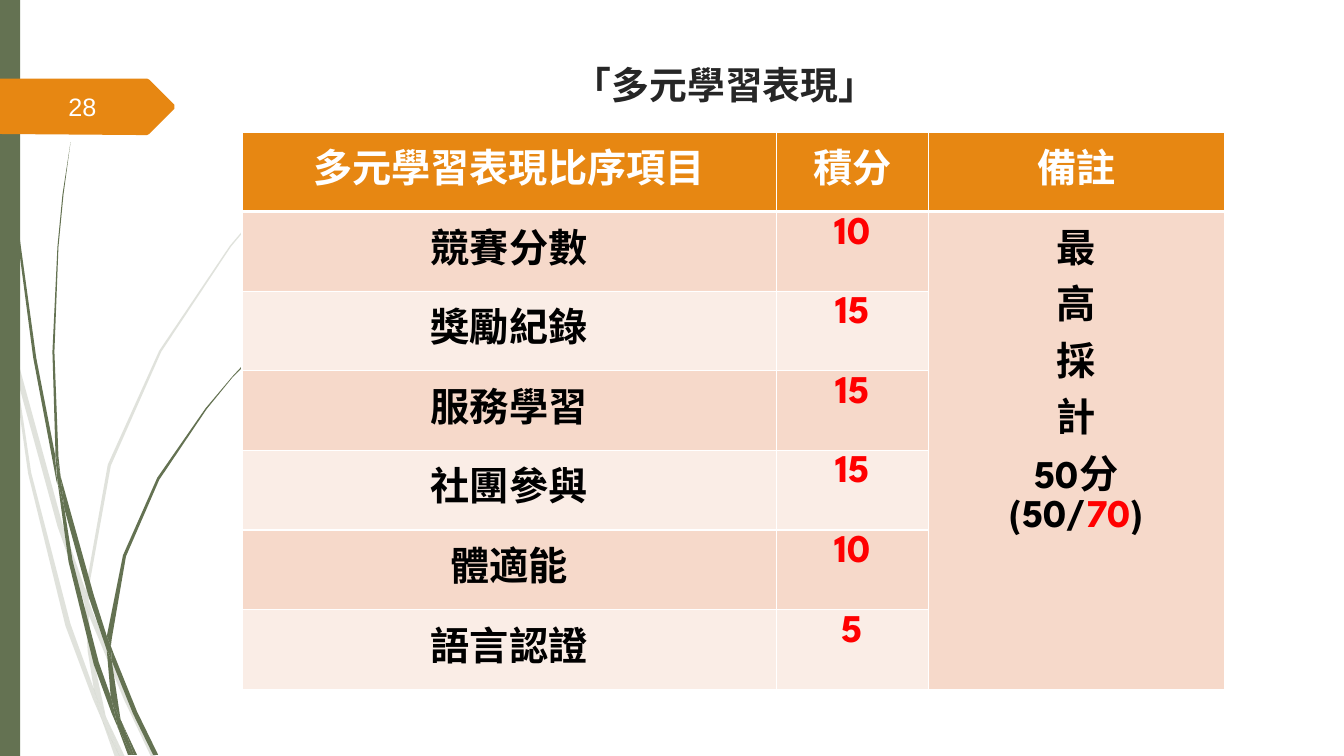
from lxml.etree import SubElement
from pptx import Presentation
from pptx.dml.color import RGBColor
from pptx.enum.shapes import MSO_SHAPE
from pptx.enum.text import MSO_ANCHOR, PP_ALIGN
from pptx.oxml.ns import qn
from pptx.util import Pt

GREEN = RGBColor(0x64, 0x72, 0x52)
ORANGE = RGBColor(0xE7, 0x87, 0x12)
PEACH = RGBColor(0xF6, 0xD9, 0xCA)
CREAM = RGBColor(0xFA, 0xED, 0xE6)
DARK = RGBColor(0x26, 0x26, 0x26)
WHITE = RGBColor(0xFF, 0xFF, 0xFF)
BLACK = RGBColor(0, 0, 0)
RED = RGBColor(0xFF, 0, 0)

UNIT = Pt(0.72)
TITLE = dict(name="League Spartan", size=Pt(27), bold=True)
CELL = dict(name="League Spartan", size=Pt(28), bold=True)
NUMBER = dict(name="Arial", size=Pt(18))

PALE_GRASS = [
    [(11, 350), (8, 322), (0, 282), (0, 299), (10, 344)],
    [(57, 522), (84, 599), (85, 586), (62, 520), (14, 345), (17, 376)],
    [(92, 607), (88, 596), (88, 610), (123, 694), (150, 751), (155, 751), (127, 692)],
    [(119, 751), (124, 751), (105, 711)],
    [(93, 683), (70, 619), (31, 469), (17, 376), (11, 350), (28, 470),
     (65, 621), (92, 693), (101, 714), (99, 707)],
    [(84, 599), (87, 646), (93, 683), (96, 692), (105, 711), (104, 706),
     (91, 646), (88, 610), (88, 608)],
    [(88, 584), (110, 462), (160, 349), (229, 245), (268, 198), (290, 175),
     (312, 153), (289, 175), (268, 197), (228, 244), (158, 348), (107, 461),
     (85, 584), (85, 586), (88, 596)],
    [(101, 714), (114, 751), (119, 751)],
    [(88, 608), (88, 610), (88, 596), (85, 586), (84, 599)],
    [(96, 692), (93, 683), (99, 707), (101, 714), (119, 751), (105, 711)],
]
DARK_GRASS = [
    [(7, 110), (17, 233), (33, 355), (56, 477), (57, 481), (55, 457),
     (55, 453), (36, 355), (19, 232), (8, 109), (5, 48), (3, 0), (3, 48)],
    [(88, 592), (106, 645), (106, 633), (106, 631), (93, 590), (60, 472), (64, 505)],
    [(113, 649), (110, 641), (111, 656), (132, 708), (152, 749), (157, 749), (136, 706)],
    [(110, 691), (98, 657), (72, 556), (64, 505), (57, 477), (68, 557),
     (93, 659), (111, 708), (117, 722), (116, 717)],
    [(60, 472), (58, 453), (54, 349), (58, 245), (63, 193), (70, 141),
     (62, 193), (57, 245), (52, 349), (55, 449)],
    [(133, 749), (136, 749), (122, 719)],
    [(57, 477), (64, 505), (60, 472), (55, 449), (55, 453)],
    [(111, 633), (125, 552), (158, 476), (205, 406), (231, 374), (246, 359),
     (261, 344), (245, 358), (231, 373), (204, 405), (156, 474), (122, 551),
     (106, 631), (110, 641)],
    [(117, 722), (127, 749), (131, 749)],
    [(106, 645), (110, 692), (116, 706), (122, 719), (120, 716), (111, 656), (109, 651)],
    [(106, 645), (109, 651), (111, 656), (110, 641), (106, 631), (106, 633)],
    [(116, 706), (110, 691), (116, 717), (117, 722), (131, 749), (133, 749), (122, 719)],
]
NUMBER_TAG = [(173, 108), (148, 133), (146, 134), (136, 134), (-1, 133),
              (0, 78), (146, 78), (148, 79), (173, 104)]

HEADERS = ["多元學習表現比序項目", "積分", "備註"]
SCORES = [("競賽分數", "10"), ("獎勵紀錄", "15"), ("服務學習", "15"),
          ("社團參與", "15"), ("體適能", "10"), ("語言認證", "5")]
NOTE = [[(text, BLACK)] for text in ("最", "高", "採", "計", "50分")]
NOTE.append([("(50/", BLACK), ("70", RED), (")", BLACK)])


def paint(sp, color, alpha=None):
    """Give a shape a flat fill without line or shadow."""
    sp.shadow.inherit = False
    sp.fill.solid()
    sp.fill.fore_color.rgb = color
    sp.line.fill.background()
    if alpha:
        clr = sp._element.spPr.find(qn("a:solidFill"))[0]
        SubElement(clr, qn("a:alpha"), val=str(alpha * 1000))


def add_outline(s, points, color, alpha=None):
    """Add a closed freeform through the points."""
    fb = s.shapes.build_freeform(*points[0], scale=UNIT)
    fb.add_line_segments(points[1:], close=True)
    paint(fb.convert_to_shape(), color, alpha)


def write(tf, lines, fmt, align):
    """Fill a text frame with lines, each a list of (text, color) runs."""
    for i, runs in enumerate(lines):
        p = tf.add_paragraph() if i else tf.paragraphs[0]
        p.alignment = align
        for text, color in runs:
            r = p.add_run()
            r.text = text
            for key, value in fmt.items():
                setattr(r.font, key, value)
            r.font.color.rgb = color


def add_text(s, box, text, color, fmt, align, anchor):
    """Add a one-line text box."""
    tf = s.shapes.add_textbox(*map(Pt, box)).text_frame
    tf.word_wrap = True
    tf.vertical_anchor = anchor
    write(tf, [[(text, color)]], fmt, align)


def set_cell(cell, lines, fill, bottom=1):
    """Write a table cell with its fill and white borders."""
    write(cell.text_frame, lines, CELL, PP_ALIGN.CENTER)
    tcPr = cell._tc.get_or_add_tcPr()
    for side, width in dict(lnL=1, lnR=1, lnT=1, lnB=bottom).items():
        ln = SubElement(tcPr, qn(f"a:{side}"), w=str(Pt(width)))
        SubElement(SubElement(ln, qn("a:solidFill")), qn("a:srgbClr"), val=str(WHITE))
    cell.fill.solid()
    cell.fill.fore_color.rgb = fill


def add_score_table(s):
    """Add the score table with its merged note column."""
    box = map(Pt, (172.8, 94.3, 702, 398.2))
    table = s.shapes.add_table(len(SCORES) + 1, len(HEADERS), *box).table
    for col, width in zip(table.columns, (381.6, 108.7, 211.7)):
        col.width = Pt(width)
    for row in table.rows:
        row.height = Pt(56.88)
    for c, header in enumerate(HEADERS):
        set_cell(table.cell(0, c), [[(header, WHITE)]], ORANGE, bottom=3)
    for n, (item, score) in enumerate(SCORES, 1):
        fill = PEACH if n % 2 else CREAM
        set_cell(table.cell(n, 0), [[(item, BLACK)]], fill)
        set_cell(table.cell(n, 1), [[(score, RED)]], fill)
    table.cell(1, 2).merge(table.cell(len(SCORES), 2))
    set_cell(table.cell(1, 2), NOTE, PEACH)


def main():
    """Build the slide and save it."""
    prs = Presentation()
    prs.slide_width, prs.slide_height = Pt(960), Pt(540)
    s = prs.slides.add_slide(prs.slide_layouts[6])
    for blade in PALE_GRASS:
        add_outline(s, blade, GREEN, alpha=20)
    for blade in DARK_GRASS:
        add_outline(s, blade, GREEN)
    paint(s.shapes.add_shape(MSO_SHAPE.RECTANGLE, 0, 0, Pt(14.4), Pt(540)), GREEN)
    add_outline(s, NUMBER_TAG, ORANGE)
    add_text(s, (167, 40.3, 702, 50.4), "「多元學習表現」", DARK, TITLE,
             PP_ALIGN.CENTER, MSO_ANCHOR.TOP)
    add_score_table(s)
    add_text(s, (41.8, 61.9, 61.2, 28.8), "28", WHITE, NUMBER,
             PP_ALIGN.LEFT, MSO_ANCHOR.MIDDLE)
    prs.save("out.pptx")


if __name__ == "__main__":
    main()
